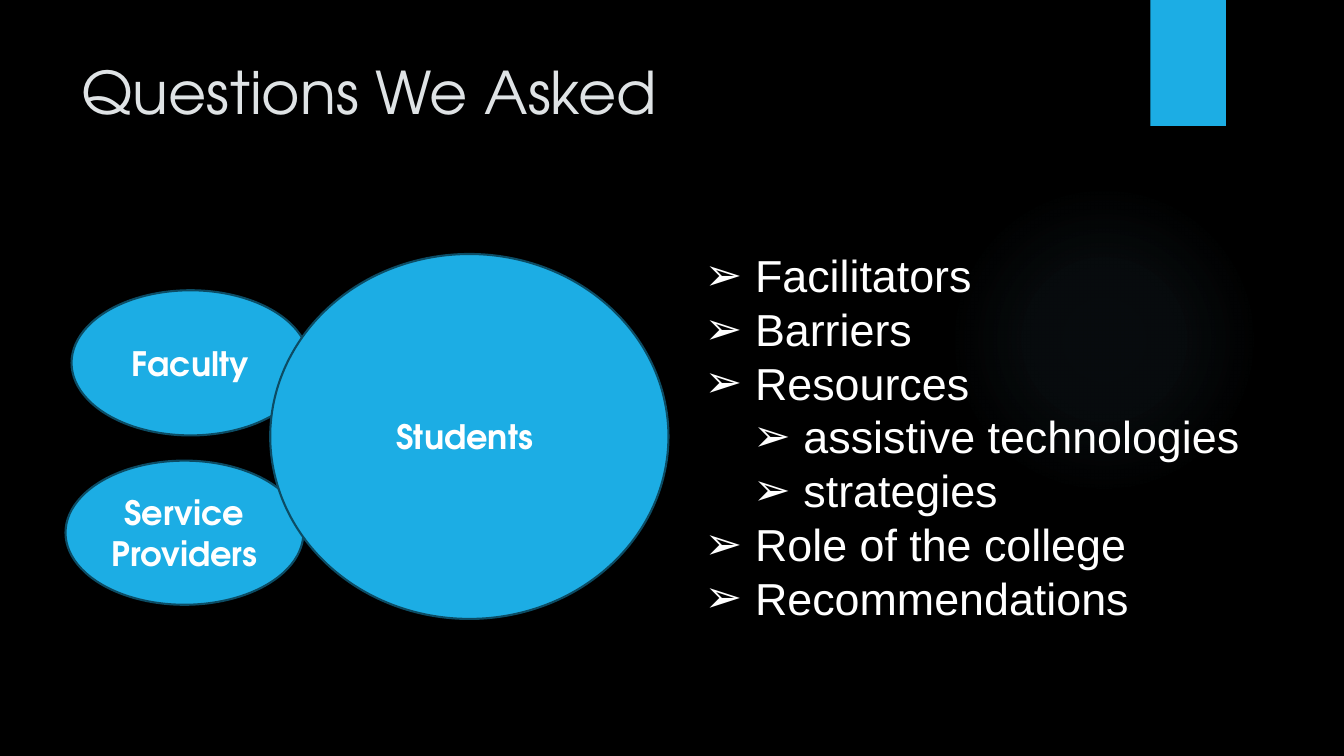
"""Build the slide on the questions asked of students, faculty and providers."""
from typing import NamedTuple

from lxml.etree import SubElement
from pptx import Presentation
from pptx.dml.color import RGBColor
from pptx.enum.shapes import MSO_SHAPE
from pptx.enum.text import MSO_ANCHOR, PP_ALIGN
from pptx.oxml.ns import qn
from pptx.util import Inches, Pt

HEADING_FONT = "TeX Gyre Adventor"
BODY_FONT = "Arial"
BLUE = "1CADE4"
OUTLINE = "0C4C64"
WHITE = "FFFFFF"


class Box(NamedTuple):
    left: float
    top: float
    width: float
    height: float


class Group(NamedTuple):
    label: str
    box: Box


class Question(NamedTuple):
    text: str
    level: int = 0


GROUPS = [
    Group("Faculty", Box(0.71, 2.88, 2.36, 1.44)),
    Group("Service Providers", Box(0.65, 4.57, 2.36, 1.43)),
    Group("Students ", Box(2.68, 2.52, 3.95, 3.62)),
]
QUESTIONS = [
    Question("Facilitators"),
    Question("Barriers"),
    Question("Resources"),
    Question("assistive technologies", 1),
    Question("strategies", 1),
    Question("Role of the college"),
    Question("Recommendations"),
]
GLOW_STOPS = [(0, 7), (36, 6), (69, 0)]


def rgb(color: str) -> RGBColor:
    return RGBColor.from_string(color)


def place(box: Box) -> list:
    return [Inches(length) for length in box]


def set_font(p, name: str, size: float, color: str, bold: bool = False) -> None:
    p.font.name = name
    p.font.size = Pt(size)
    p.font.bold = bold
    p.font.color.rgb = rgb(color)


def add_shape(slide, kind, box: Box, fill: str = BLUE):
    sp = slide.shapes.add_shape(kind, *place(box))
    sp.shadow.inherit = False
    sp.fill.solid()
    sp.fill.fore_color.rgb = rgb(fill)
    sp.line.fill.background()
    return sp


def add_text_frame(slide, box: Box):
    tf = slide.shapes.add_textbox(*place(box)).text_frame
    tf.word_wrap = True
    return tf


def add_glow(slide, box: Box, color: str) -> None:
    sp = add_shape(slide, MSO_SHAPE.OVAL, box, color)
    props = sp.fill._xPr
    solid = props.find(qn("a:solidFill"))
    grad = solid.makeelement(qn("a:gradFill"), {"rotWithShape": "1"})
    stops = SubElement(grad, qn("a:gsLst"))
    for position, opacity in GLOW_STOPS:
        stop = SubElement(stops, qn("a:gs"), pos=str(position * 1000))
        stop_color = SubElement(stop, qn("a:srgbClr"), val=color)
        SubElement(stop_color, qn("a:alpha"), val=str(opacity * 1000))
    circle = SubElement(grad, qn("a:path"), {"path": "circle"})
    SubElement(circle, qn("a:fillToRect"), {side: "50000" for side in "ltrb"})
    props.replace(solid, grad)


def add_group(slide, group: Group) -> None:
    sp = add_shape(slide, MSO_SHAPE.OVAL, group.box)
    sp.line.color.rgb = rgb(OUTLINE)
    sp.line.width = Pt(1.5)
    tf = sp.text_frame
    tf.word_wrap = True
    tf.vertical_anchor = MSO_ANCHOR.MIDDLE
    p = tf.paragraphs[0]
    p.text = group.label
    p.alignment = PP_ALIGN.CENTER
    set_font(p, HEADING_FONT, 24, WHITE, bold=True)


def add_questions(slide, box: Box, questions: list[Question]) -> None:
    tf = add_text_frame(slide, box)
    for i, question in enumerate(questions):
        p = tf.paragraphs[0] if i == 0 else tf.add_paragraph()
        p.text = question.text
        p.level = question.level
        p.line_spacing = Pt(38.4)
        props = p._p.get_or_add_pPr()
        props.set("marL", str(Inches(0.5 + 0.48 * question.level)))
        props.set("indent", str(Inches(-0.5)))
        SubElement(props, qn("a:buFont"), typeface=BODY_FONT)
        SubElement(props, qn("a:buChar"), char="➢")
        set_font(p, BODY_FONT, 32, WHITE)


def main() -> None:
    prs = Presentation()
    prs.slide_width = Inches(13.33)
    prs.slide_height = Inches(7.5)
    slide = prs.slides.add_slide(prs.slide_layouts[6])
    slide.background.fill.solid()
    slide.background.fill.fore_color.rgb = rgb("000000")

    add_glow(slide, Box(9.41, 1.83, 3.08, 3.08), "70A1C0")
    p = add_text_frame(slide, Box(0.71, 0.5, 10.29, 1.53)).paragraphs[0]
    p.text = "Questions We Asked"
    set_font(p, HEADING_FONT, 42, "DFE3E5")
    add_questions(slide, Box(6.89, 2.41, 5.69, 4.6), QUESTIONS)
    for group in GROUPS:
        add_group(slide, group)
    add_shape(slide, MSO_SHAPE.RECTANGLE, Box(11.41, 0, 0.75, 1.25))
    prs.save("out.pptx")


if __name__ == "__main__":
    main()
